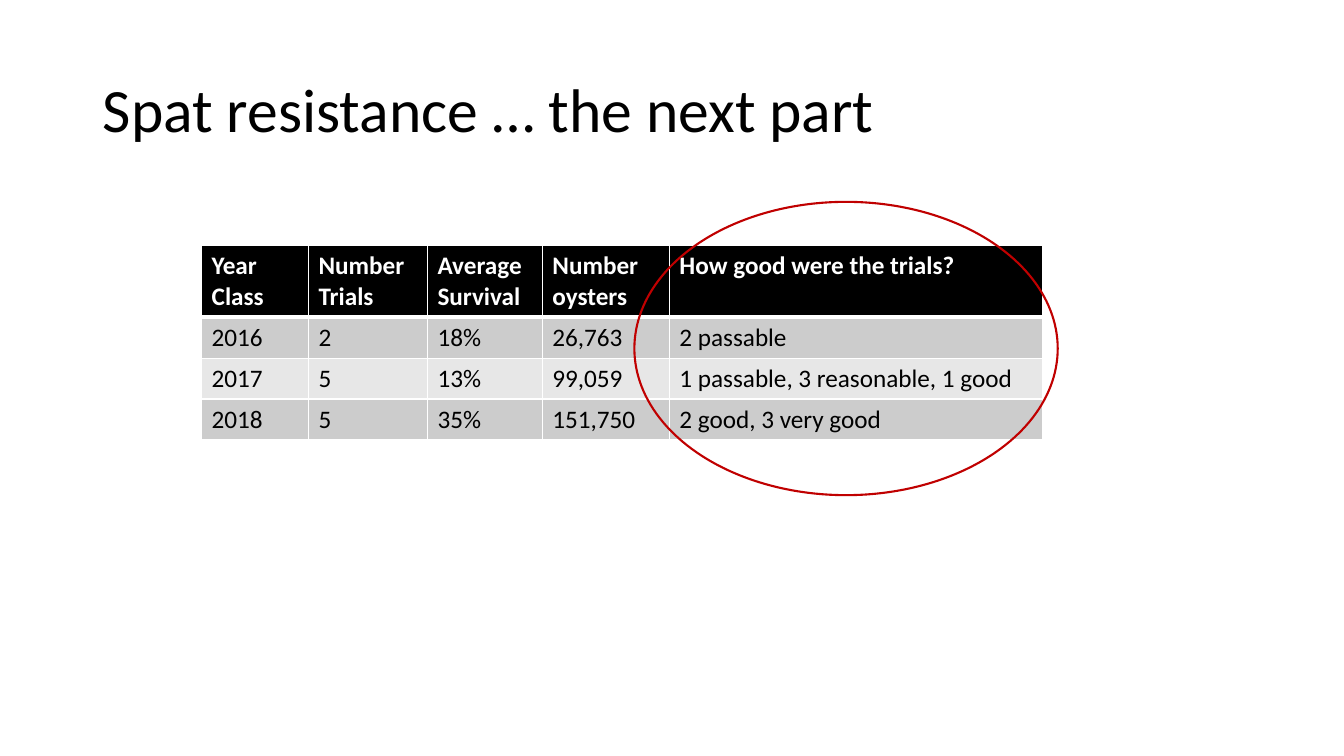
from lxml import etree
from pptx import Presentation
from pptx import util as u
from pptx.dml.color import RGBColor
from pptx.enum import shapes, text
from pptx.oxml.ns import qn

FONT = "Calibri"
WIDTH, HEIGHT = u.Inches(13.33), u.Inches(7.5)
COLUMNS = [1.06, 1.18, 1.14, 1.26, 3.7]
HEADER_HEIGHT, ROW_HEIGHT = 0.7, 0.4
TRIALS = [
    ["Year\vClass", "Number\vTrials", "Average\vSurvival", "Number\voysters", "How good were the trials?"],
    ["2016", "2", "18%", "26,763", "2 passable"],
    ["2017", "5", "13%", "99,059", "1 passable, 3 reasonable, 1 good"],
    ["2018", "5", "35%", "151,750", "2 good, 3 very good"],
]


def rgb(value):
    return RGBColor.from_string(value)


def box(left, top, width, height):
    return (int(WIDTH * left), int(HEIGHT * top), int(WIDTH * width), int(HEIGHT * height))


def set_font(p, size, color, bold=False):
    p.font.name = FONT
    p.font.size = u.Pt(size)
    p.font.bold = bold
    p.font.color.rgb = rgb(color)


def set_border(cell, side, points):
    ln = etree.SubElement(cell._tc.get_or_add_tcPr(), qn(f"a:ln{side}"), w=str(u.Pt(points)))
    fill = etree.SubElement(ln, qn("a:solidFill"))
    etree.SubElement(fill, qn("a:srgbClr"), val="FFFFFF")


def add_title(slide, words, area):
    sp = slide.shapes.title
    sp.left, sp.top, sp.width, sp.height = area
    tf = sp.text_frame
    tf.text = words
    tf.vertical_anchor = text.MSO_ANCHOR.MIDDLE
    p = tf.paragraphs[0]
    p.alignment = text.PP_ALIGN.LEFT
    p.line_spacing = 0.9
    set_font(p, 44, "000000")


def format_cell(cell, words, row):
    header = row == 0
    cell.text = words
    set_font(cell.text_frame.paragraphs[0], 18, "FFFFFF" if header else "000000", header)
    for side in "LRTB":
        under_header = (row, side) in ((0, "B"), (1, "T"))
        set_border(cell, side, 3 if under_header else 1)
    cell.fill.solid()
    cell.fill.fore_color.rgb = rgb("000000" if header else "CCCCCC" if row % 2 else "E7E7E7")


def add_trials_table(slide, rows, area):
    table = slide.shapes.add_table(len(rows), len(COLUMNS), *area).table
    for column, width in zip(table.columns, COLUMNS):
        column.width = u.Inches(width)
    for i, words in enumerate(rows):
        table.rows[i].height = u.Inches(ROW_HEIGHT if i else HEADER_HEIGHT)
        for j, word in enumerate(words):
            format_cell(table.cell(i, j), word, i)


def add_ring(slide, area, color):
    sp = slide.shapes.add_shape(shapes.MSO_SHAPE.OVAL, *area)
    sp.shadow.inherit = False
    sp.fill.background()
    sp.line.color.rgb = rgb(color)
    sp.line.width = u.Pt(1.5)


def main():
    prs = Presentation()
    prs.slide_width, prs.slide_height = WIDTH, HEIGHT
    slide = prs.slides.add_slide(prs.slide_layouts[5])
    add_title(slide, "Spat resistance … the next part", box(0.069, 0.053, 0.863, 0.193))
    add_trials_table(slide, TRIALS, box(0.15, 0.325, 0.626, 0.253))
    add_ring(slide, box(0.472, 0.267, 0.315, 0.388), "C00000")
    prs.save("out.pptx")


if __name__ == "__main__":
    main()
